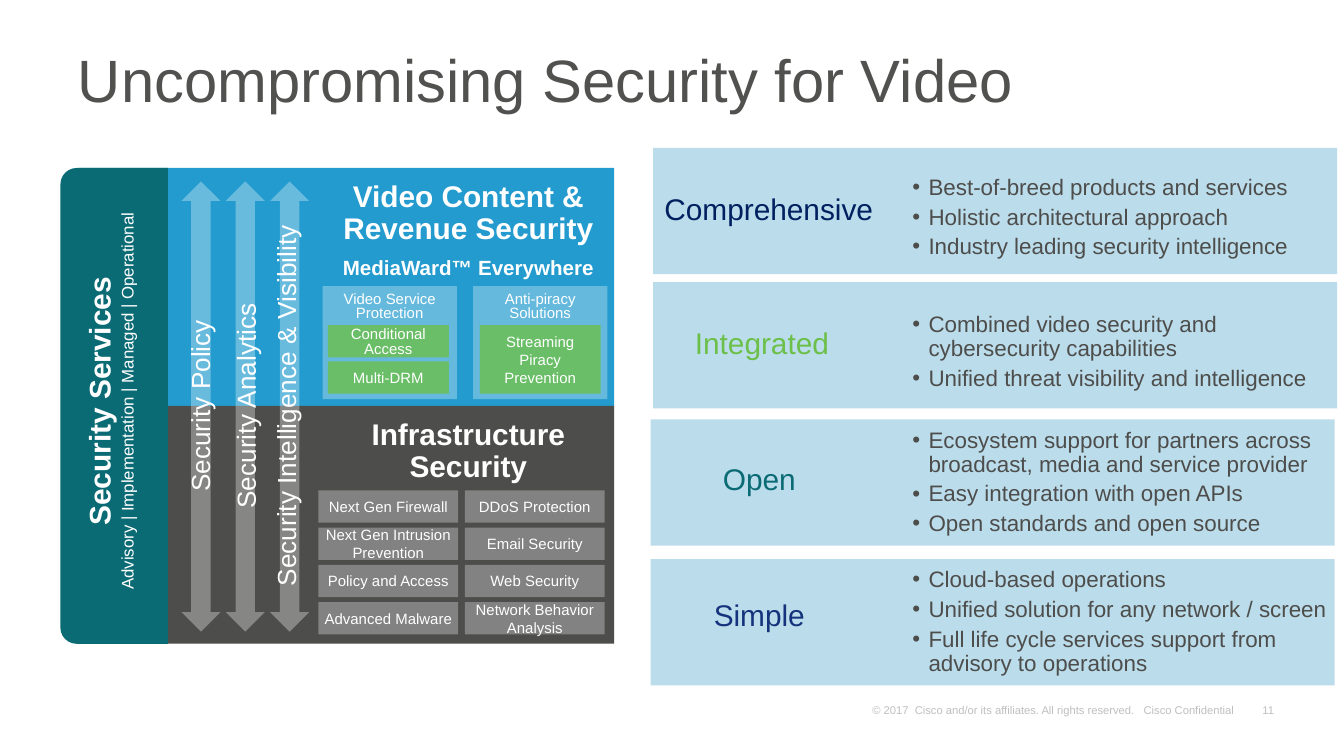
import math

import pptx
import pptx.util
import pptx.dml.color
import pptx.enum.shapes
import pptx.enum.text
from lxml import etree
from pptx.oxml.ns import qn

Inches = pptx.util.Inches
Pt = pptx.util.Pt
SHAPE = pptx.enum.shapes.MSO_SHAPE
ALIGN = pptx.enum.text.PP_ALIGN
ANCHOR = pptx.enum.text.MSO_ANCHOR

COLORS = {
    "white": "FFFFFF", "title": "515150", "dark": "4D4D4C", "blue": "239BCF",
    "card": "218DBC", "teal": "0B6B75", "green": "6CC04A", "navy": "002060",
    "indigo": "14337C", "footer": "BFBFBF",
}
INSETS = (0.1, 0.05, 0.1, 0.05)
LOWERED = (0.1, 0.07, 0.1, 0.05)
TIGHT = (0, 0.05, 0, 0.05)
HEADED = (0, 0.1, 0, 0.05)
FOOTER = (0.07, 0.03, 0.07, 0.03)

ARROWS = [
    (1.35, "Security Policy", 1.49, 1.49),
    (1.68, "Security Analytics", 1.83, 1.74),
    (2.01, "Security Intelligence & Visibility", 2.13, 2.9),
]
TILES = [
    ("Next Gen Firewall", "DDoS Protection"),
    ("Next Gen Intrusion Prevention", "Email Security"),
    ("Policy and Access", "Web Security"),
    ("Advanced Malware", "Network Behavior Analysis"),
]
BENEFITS = [
    ("Comprehensive", "navy", 4.86, 1.1, 4.55, 1.37, 1.26,
     ["Best-of-breed products and services", "Holistic architectural approach",
      "Industry leading security intelligence"]),
    ("Integrated", "green", 4.86, 2.1, 4.5, 2.37, 2.28,
     ["Combined video security and cybersecurity capabilities",
      "Unified threat visibility and intelligence"]),
    ("Open", "teal", 4.84, 3.12, 4.48, 3.38, 3.14,
     ["Ecosystem support for partners across broadcast, media and service provider",
      "Easy integration with open APIs", "Open standards and open source"]),
    ("Simple", "indigo", 4.84, 4.16, 4.48, 4.39, 4.18,
     ["Cloud-based operations", "Unified solution for any network / screen",
      "Full life cycle services support from advisory to operations"]),
]


def rgb(name):
    """Return the named colour."""
    return pptx.dml.color.RGBColor.from_string(COLORS[name])


def paint(sp, color, alpha=100):
    """Fill a shape without line or shadow."""
    sp.shadow.inherit = False
    sp.fill.solid()
    sp.fill.fore_color.rgb = rgb(color)
    sp.line.fill.background()
    if alpha < 100:
        clr = sp.fill._xPr.find(qn("a:solidFill"))[0]
        etree.SubElement(clr, qn("a:alpha"), val=str(alpha * 1000))


def add_bullet(p):
    """Give a paragraph a hanging round bullet."""
    pPr = p._p.get_or_add_pPr()
    pPr.set("marL", str(Inches(0.12)))
    pPr.set("indent", str(-Inches(0.12)))
    etree.SubElement(pPr, qn("a:buFont"), typeface="Arial")
    etree.SubElement(pPr, qn("a:buChar"), char="•")


def write(sp, lines, size, color="white", bold=False, align=ALIGN.CENTER,
          anchor=ANCHOR.TOP, insets=INSETS, spacing=None, before=0,
          bullets=False, wrap=True):
    """Write paragraphs of one format into a shape."""
    tf = sp.text_frame
    names = ("margin_left", "margin_top", "margin_right", "margin_bottom")
    frame = dict(zip(names, map(Inches, insets)))
    frame.update(word_wrap=wrap, vertical_anchor=anchor)
    for key, value in frame.items():
        setattr(tf, key, value)
    for i, text in enumerate(lines):
        p = tf.add_paragraph() if i else tf.paragraphs[0]
        p.alignment = align
        if spacing:
            p.line_spacing = spacing
        if i:
            p.space_before = Pt(before)
        if bullets:
            add_bullet(p)
        r = p.add_run()
        r.text = text
        font = {"name": "Arial", "size": Pt(size), "bold": bold}
        for key, value in font.items():
            setattr(r.font, key, value)
        r.font.color.rgb = rgb(color)


def add_text(s, box, lines, size, **style):
    """Add a text box."""
    sp = s.shapes.add_textbox(*map(Inches, box))
    write(sp, lines, size, **style)
    return sp


def add_block(s, box, color, alpha=100, kind=SHAPE.RECTANGLE):
    """Add a filled preset shape."""
    sp = s.shapes.add_shape(kind, *map(Inches, box))
    paint(sp, color, alpha)
    return sp


def add_panel(s, outer, inner, color):
    """Add a panel whose outer left corner is rounded."""
    left, right, radius = 0.46, 4.57, 0.13
    turn = math.copysign(radius, inner - outer)
    angles = [math.radians(a) for a in range(0, 91, 15)]
    arc = [(left + radius * (1 - math.cos(a)), outer + turn * (1 - math.sin(a)))
           for a in angles]
    points = [(left, inner)] + arc + [(right, outer), (right, inner)]
    points = [(Inches(x), Inches(y)) for x, y in points]
    fb = s.shapes.build_freeform(*points[0])
    fb.add_line_segments(points[1:], close=True)
    paint(fb.convert_to_shape(), color)


def add_services(s):
    """Add the teal services band with its vertical text."""
    band = add_block(s, (-0.92, 2.62, 3.54, 0.8), "teal",
                     kind=SHAPE.ROUND_2_SAME_RECTANGLE)
    band.adjustments[0] = 0.15
    band.rotation = 270
    sp = add_text(s, (0.47, 1.28, 0.68, 3.41),
                  ["Security Services", "Advisory | Implementation | Managed | Operational"],
                  16, bold=True, anchor=ANCHOR.MIDDLE, insets=HEADED)
    sp.text_frame._txBody.bodyPr.set("vert", "vert270")
    r = sp.text_frame.paragraphs[1].runs[0]
    for key, value in {"size": Pt(9), "bold": False}.items():
        setattr(r.font, key, value)


def add_arrow(s, left, label, center, length):
    """Add a double arrow with upright text."""
    sp = add_block(s, (left, 1.35, 0.29, 3.35), "white", 32, SHAPE.UP_DOWN_ARROW)
    sp.adjustments[0], sp.adjustments[1] = 1.0, 0.5
    tx = add_text(s, (center - length / 2, 2.85, length, 0.34), [label], 14, wrap=False)
    tx.rotation = 270


def add_headings(s):
    """Add the headings of the two panels."""
    add_text(s, (2.31, 3.02, 2.35, 1.6), ["Infrastructure Security"], 16,
             bold=True, insets=HEADED, spacing=0.9)
    sp = add_text(s, (2.31, 1.25, 2.35, 1.77),
                  ["Video Content & Revenue Security", "MediaWard™ Everywhere"],
                  16, bold=True, insets=HEADED, spacing=0.9, before=5)
    p = sp.text_frame.paragraphs[1]
    p.line_spacing = 1.0
    p.runs[0].font.size = Pt(11)


def add_solutions(s):
    """Add the video solutions and their green parts."""
    for left, text in ((2.4, "Video Service Protection"), (3.52, "Anti-piracy Solutions")):
        write(add_block(s, (left, 2.13, 1, 0.84), "white", 30), [text], 8, spacing=0.8)
    for left, top, height, text, spacing, insets in (
            (2.44, 2.42, 0.24, "Conditional Access", 0.8, LOWERED),
            (2.44, 2.69, 0.24, "Multi-DRM", None, INSETS),
            (3.57, 2.42, 0.51, "Streaming Piracy Prevention", None, INSETS)):
        write(add_block(s, (left, top, 0.9, height), "green", 80), [text], 8,
              anchor=ANCHOR.MIDDLE, spacing=spacing, insets=insets)


def add_tiles(s):
    """Add the grid of infrastructure tiles."""
    top, bottom = 3.65, 4.48
    pitch = (bottom - top) / (len(TILES) - 1)
    for row, texts in enumerate(TILES):
        for col, text in enumerate(texts):
            box = (2.37 + 1.09 * col, top + pitch * row, 1.04, 0.24)
            write(add_block(s, box, "white", 30), [text], 8,
                  anchor=ANCHOR.MIDDLE, insets=TIGHT)


def add_benefit(s, name, color, left, top, name_left, name_top, list_top, items):
    """Add a benefit card with its name and bullets."""
    add_block(s, (left, top, 5.09, 0.94), "card", 30)
    add_text(s, (name_left, name_top, 2.34, 0.37), [name], 16, color=color)
    height = 0.69 if len(items) == 2 else 0.91
    add_text(s, (6.69, list_top, 3.31, height), items, 12, color="dark",
             align=ALIGN.LEFT, spacing=0.9, before=3, bullets=True)


def main():
    """Build the slide and save it."""
    prs = pptx.Presentation()
    prs.slide_width = Inches(10)
    prs.slide_height = prs.slide_width * 9 // 16
    s = prs.slides.add_slide(prs.slide_layouts[5])
    title = s.shapes.title
    place = dict(zip(("left", "top", "width", "height"), map(Inches, (0.48, 0.37, 9.13, 0.8))))
    for key, value in place.items():
        setattr(title, key, value)
    write(title, ["Uncompromising Security for Video"], 32, color="title",
          align=ALIGN.LEFT, spacing=0.8)
    add_panel(s, 1.25, 3.02, "blue")
    add_panel(s, 4.79, 3.02, "dark")
    add_services(s)
    for arrow in ARROWS:
        add_arrow(s, *arrow)
    add_headings(s)
    add_solutions(s)
    add_tiles(s)
    for benefit in BENEFITS:
        add_benefit(s, *benefit)
    footer = {"color": "footer", "anchor": ANCHOR.BOTTOM, "insets": FOOTER}
    add_text(s, (6.42, 5.19, 2.91, 0.17),
             ["© 2017  Cisco and/or its affiliates. All rights reserved.   Cisco Confidential"],
             6, align=ALIGN.LEFT, **footer)
    add_text(s, (9.31, 5.19, 0.24, 0.17), ["11"], 6, align=ALIGN.RIGHT, wrap=False, **footer)
    prs.save("out.pptx")


if __name__ == "__main__":
    main()
